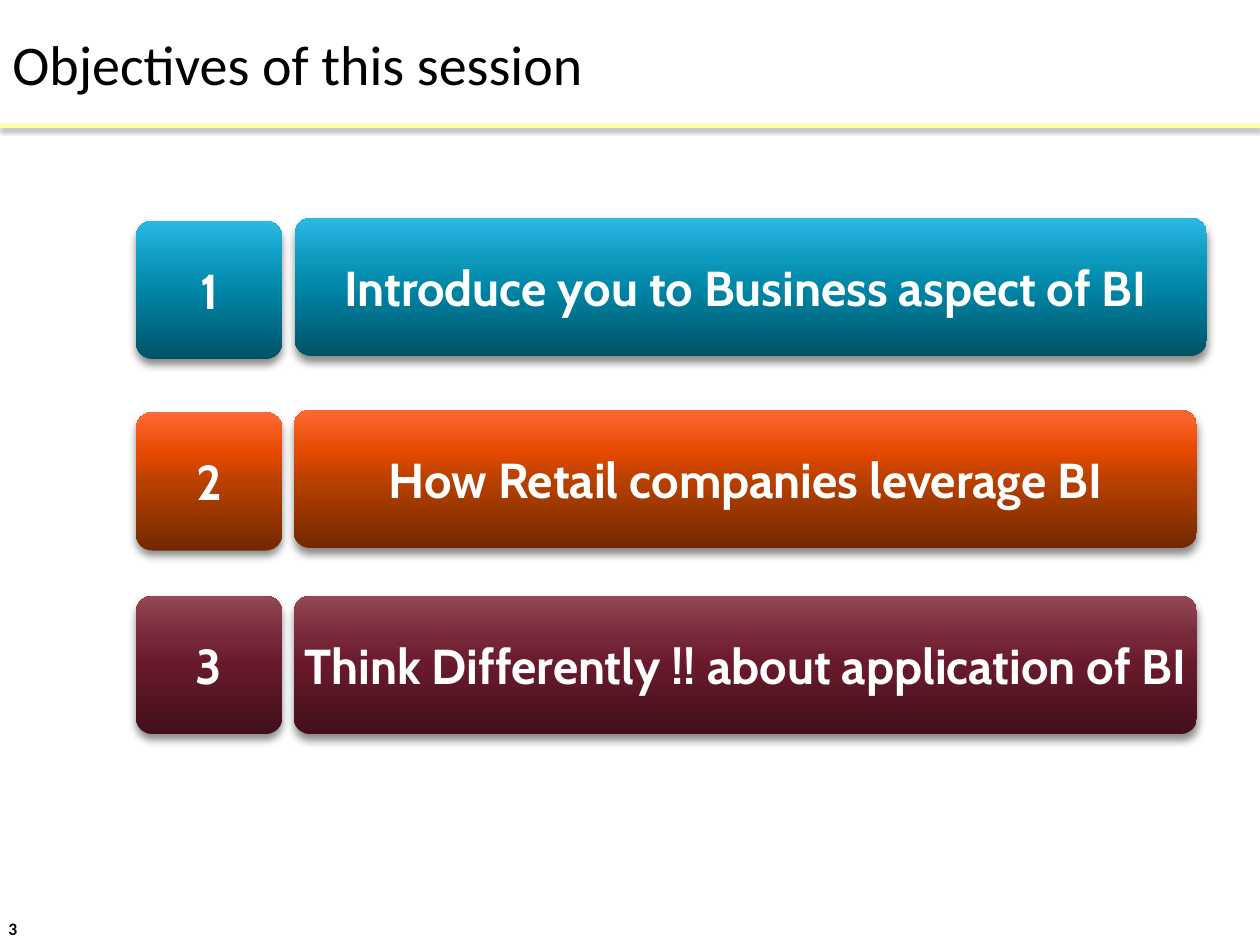
from lxml import etree
from pptx import Presentation
from pptx.dml.color import RGBColor
from pptx.enum.shapes import MSO_CONNECTOR, MSO_SHAPE
from pptx.enum.text import MSO_ANCHOR, PP_ALIGN
from pptx.oxml.ns import qn
from pptx.util import Cm, Pt

STRAIGHT = MSO_CONNECTOR.STRAIGHT
ROUNDED = MSO_SHAPE.ROUNDED_RECTANGLE
MIDDLE = MSO_ANCHOR.MIDDLE
LEFT, CENTER = PP_ALIGN.LEFT, PP_ALIGN.CENTER

COLORS = {"text": "000000", "label": "FFFFFF", "rule": "FEFF99",
          "thin_rule": "A6A6A6", "shadow": "000000"}
GRADIENTS = {
    "blue": ["005367", "0086A7", "0E9ABE", "2CB9E3"],
    "orange": ["732800", "B94100", "E64900", "FF6933"],
    "wine": ["420F1A", "681A2B", "772939", "944755"],
}
STOPS = [0, 50, 70, 100]
TILE_HEIGHT = 2.79
NUMBER_LEFT, NUMBER_WIDTH = 2.74, 2.95
OBJECTIVES = [
    ("Introduce you to Business aspect of BI ", "blue", 4.45, (5.94, 4.39, 18.39)),
    ("How Retail companies leverage BI", "orange", 8.31, (5.92, 8.26, 18.21)),
    ("Think Differently !! about application of BI", "wine", 12.01, (5.92, 12.01, 18.21)),
]


def write_text(shape, text, size, font="Calibri", color="text", bold=False,
               align=LEFT, wrap=True):
    """Fill a shape with one vertically centred paragraph."""
    frame = shape.text_frame
    frame.word_wrap = wrap
    frame.vertical_anchor = MIDDLE
    para = frame.paragraphs[0]
    para.alignment = align
    span = para.add_run()
    span.text = text
    span.font.name = font
    span.font.size = Pt(size)
    span.font.bold = bold
    span.font.color.rgb = RGBColor.from_string(COLORS[color])


def add_color(parent, color, alpha=100):
    """Append a colour element with an opacity in percent."""
    element = etree.SubElement(parent, qn("a:srgbClr"), val=color)
    if alpha < 100:
        etree.SubElement(element, qn("a:alpha"), val=str(alpha * 1000))


def set_shadow(shape, blur=0, distance=0, alpha=0):
    """Give a shape a downward shadow, or none when alpha is zero."""
    properties = shape._element.spPr
    effects = etree.SubElement(properties, qn("a:effectLst"))
    if alpha:
        shadow = etree.SubElement(
            effects, qn("a:outerShdw"), blurRad=str(Pt(blur)),
            dist=str(Pt(distance)), dir="5400000", rotWithShape="0")
        add_color(shadow, COLORS["shadow"], alpha)


def set_gradient(shape, colors):
    """Fill a shape with colours running from bottom to top."""
    shape.fill.gradient()
    shape.fill.gradient_angle = 90
    stops = shape._element.spPr.find(qn("a:gradFill")).find(qn("a:gsLst"))
    for stop in list(stops):
        stops.remove(stop)
    for position, color in zip(STOPS, colors):
        stop = etree.SubElement(stops, qn("a:gs"), pos=str(position * 1000))
        add_color(stop, color)


def add_textbox(page, box, text, size, **style):
    """Place a text box at left, top, width, height in centimetres."""
    shape = page.shapes.add_textbox(*map(Cm, box))
    write_text(shape, text, size, **style)


def add_rule(page, left, top, width, color, weight, **shadow):
    """Draw a horizontal rule."""
    rule = page.shapes.add_connector(
        STRAIGHT, Cm(left), Cm(top), Cm(left + width), Cm(top))
    rule.line.color.rgb = RGBColor.from_string(COLORS[color])
    rule.line.width = Pt(weight)
    set_shadow(rule, **shadow)


def add_header(page, box, title):
    """Place the title with the two rules along the bottom of its band."""
    left, top, width, height = box
    add_rule(page, left, top + height, 20.75, "thin_rule", 0.75)
    add_rule(page, left, top + height, width, "rule", 2,
             blur=3.1, distance=1.6, alpha=38)
    add_textbox(page, (left, top, 21, height), title, 32)


def add_tile(page, box, text, gradient):
    """Place a rounded gradient tile with a centred label."""
    tile = page.shapes.add_shape(ROUNDED, *map(Cm, box))
    tile.adjustments[0] = 0.12
    set_gradient(tile, GRADIENTS[gradient])
    tile.line.fill.background()
    set_shadow(tile, blur=5, distance=3, alpha=45)
    write_text(tile, text, 28, font="Cabin", color="label", bold=True,
               align=CENTER, wrap=False)


def add_objective(page, number_box, bar_box, number, text, gradient):
    """Place one numbered objective as a number tile and a bar."""
    add_tile(page, number_box, str(number), gradient)
    add_tile(page, bar_box, text, gradient)


def main():
    """Build the session objectives slide."""
    deck = Presentation()
    deck.slide_width, deck.slide_height = Cm(25.4), Cm(19.05)
    page = deck.slides.add_slide(deck.slide_layouts[6])
    add_header(page, (0, 0, 25.4, 2.54), "Objectives of this session")
    for number, (text, gradient, top, bar) in enumerate(OBJECTIVES, start=1):
        number_box = (NUMBER_LEFT, top, NUMBER_WIDTH, TILE_HEIGHT)
        add_objective(page, number_box, (*bar, TILE_HEIGHT), number, text, gradient)
    add_textbox(page, (-0.08, 18.21, 5.92, 1.02), "3", 10, bold=True)
    deck.save("out.pptx")


if __name__ == "__main__":
    main()
